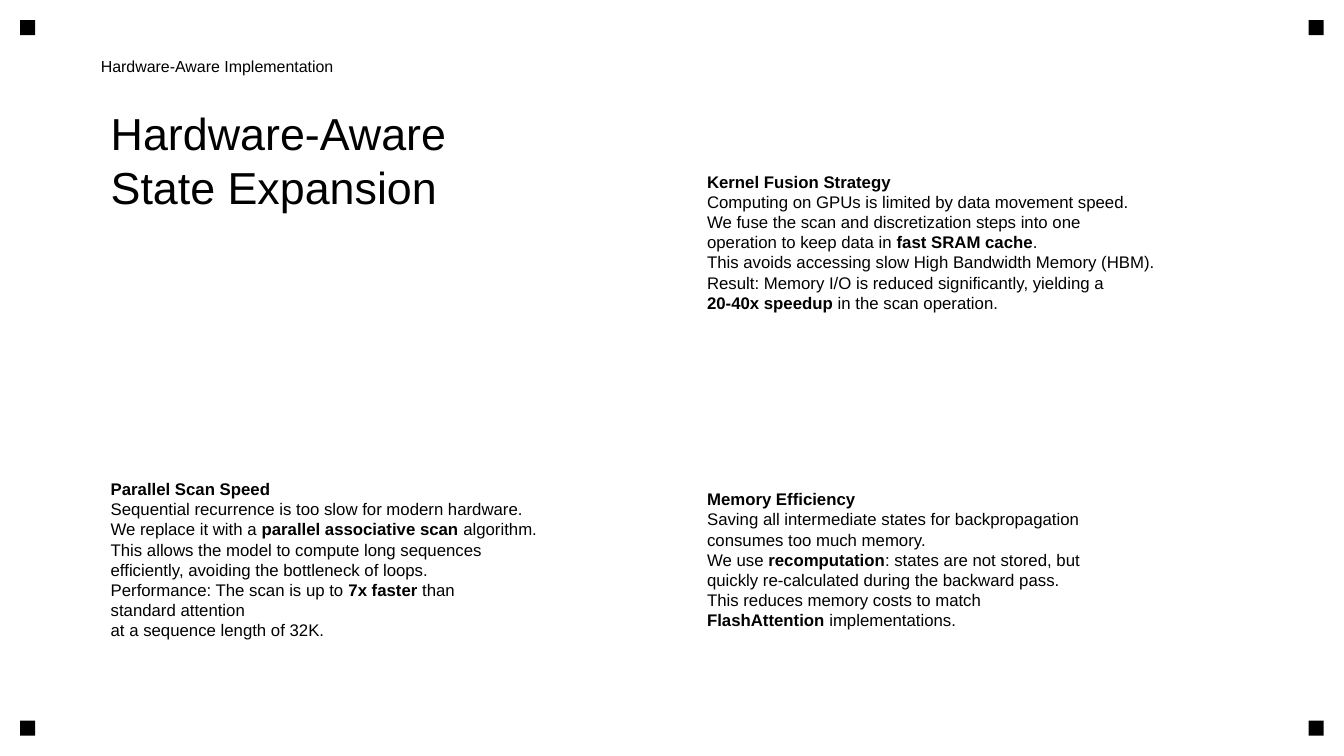
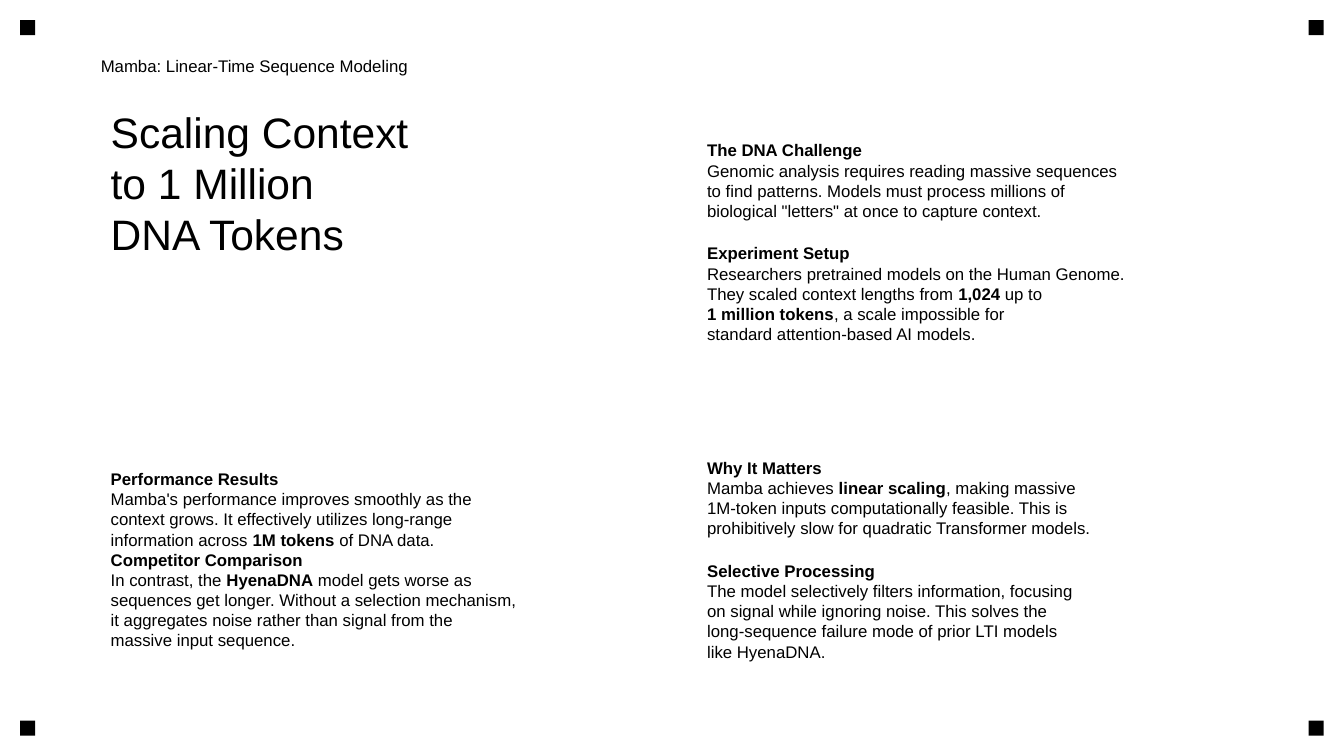
import pptx
import pptx.dml.color
import pptx.enum.shapes
import pptx.enum.text
import pptx.util
from pptx.util import Cm, Pt

INK = pptx.dml.color.RGBColor(0x00, 0x00, 0x00)
PAPER = pptx.dml.color.RGBColor(0xFF, 0xFF, 0xFF)
FONT = "Arial"
BODY_SIZE = 12
LEADING = 1.2

PAGE_WIDTH, PAGE_HEIGHT = Cm(33.87), Cm(19.05)
MARGIN, BOTTOM_MARGIN = Cm(2.54), Cm(1.27)
COLUMN_GAP, ROW_GAP = Cm(1.27), Cm(0.76)
PANEL_WIDTH = (PAGE_WIDTH - 2 * MARGIN - COLUMN_GAP) // 2
PANEL_HEIGHT = (PAGE_HEIGHT - MARGIN - BOTTOM_MARGIN - ROW_GAP) // 2
PANEL_INSETS = (Cm(0.25), Cm(0.13), Cm(0.13), Cm(0.25))
SECTION_GAP = Pt(16)
CORNER_SIZE, CORNER_INSET = Cm(0.38), Cm(0.51)

# In body text, ** switches bold on and off. A panel is a list of sections,
# each a list of lines that starts with its heading.
SLIDES = [
    {
        "caption": ("Hardware-Aware Implementation", 11.4),
        "title": (["Hardware-Aware", "State Expansion"], 32),
        "top_right": [[
            "**Kernel Fusion Strategy**",
            "Computing on GPUs is limited by data movement speed.",
            "We fuse the scan and discretization steps into one",
            "operation to keep data in **fast SRAM cache**.",
            "This avoids accessing slow High Bandwidth Memory (HBM).",
            "Result: Memory I/O is reduced significantly, yielding a",
            "**20-40x speedup** in the scan operation.",
        ]],
        "bottom_left": [[
            "**Parallel Scan Speed**",
            "Sequential recurrence is too slow for modern hardware.",
            "We replace it with a **parallel associative scan** algorithm.",
            "This allows the model to compute long sequences",
            "efficiently, avoiding the bottleneck of loops.",
            "Performance: The scan is up to **7x faster** than",
            "standard attention",
            "at a sequence length of 32K.",
        ]],
        "bottom_right": [[
            "**Memory Efficiency**",
            "Saving all intermediate states for backpropagation",
            "consumes too much memory.",
            "We use **recomputation**: states are not stored, but",
            "quickly re-calculated during the backward pass.",
            "This reduces memory costs to match",
            "**FlashAttention** implementations.",
        ]],
    },
    {
        "caption": ("Mamba: Linear-Time Sequence Modeling", 12),
        "title": (["Scaling Context", "to 1 Million", "DNA Tokens"], 30.4),
        "top_right": [[
            "**The DNA Challenge**",
            "Genomic analysis requires reading massive sequences",
            "to find patterns. Models must process millions of",
            'biological "letters" at once to capture context.',
        ], [
            "**Experiment Setup**",
            "Researchers pretrained models on the Human Genome.",
            "They scaled context lengths from **1,024** up to",
            "**1 million tokens**, a scale impossible for",
            "standard attention-based AI models.",
        ]],
        "bottom_left": [[
            "**Performance Results**",
            "Mamba's performance improves smoothly as the",
            "context grows. It effectively utilizes long-range",
            "information across **1M tokens** of DNA data.",
            "**Competitor Comparison**",
            "In contrast, the **HyenaDNA** model gets worse as",
            "sequences get longer. Without a selection mechanism,",
            "it aggregates noise rather than signal from the",
            "massive input sequence.",
        ]],
        "bottom_right": [[
            "**Why It Matters**",
            "Mamba achieves **linear scaling**, making massive",
            "1M-token inputs computationally feasible. This is",
            "prohibitively slow for quadratic Transformer models.",
        ], [
            "**Selective Processing**",
            "The model selectively filters information, focusing",
            "on signal while ignoring noise. This solves the",
            "long-sequence failure mode of prior LTI models",
            "like HyenaDNA.",
        ]],
    },
]


def panel_box(column, row):
    """Return left, top, width and height of a cell of the two-by-two grid."""
    return (MARGIN + column * (PANEL_WIDTH + COLUMN_GAP),
            MARGIN + row * (PANEL_HEIGHT + ROW_GAP),
            PANEL_WIDTH, PANEL_HEIGHT)


def set_frame(shape, insets, anchor):
    frame = shape.text_frame
    frame.word_wrap = True
    frame.auto_size = pptx.enum.text.MSO_AUTO_SIZE.NONE
    frame.vertical_anchor = anchor
    (frame.margin_left, frame.margin_top,
     frame.margin_right, frame.margin_bottom) = insets
    return frame


def write_sections(frame, sections, size):
    paragraph = None
    for section in sections:
        if paragraph is not None:
            paragraph.space_after = SECTION_GAP
        for line in section:
            paragraph = frame.paragraphs[0] if paragraph is None else frame.add_paragraph()
            for index, span in enumerate(line.split("**")):
                if span:
                    run = paragraph.add_run()
                    run.text = span
                    if index % 2:
                        run.font.bold = True
            paragraph.alignment = pptx.enum.text.PP_ALIGN.LEFT
            paragraph.line_spacing = Pt(round(size * LEADING, 1))
            paragraph.font.name = FONT
            paragraph.font.size = Pt(size)
            paragraph.font.color.rgb = INK


def add_corner_marks(page):
    for top in (CORNER_INSET, PAGE_HEIGHT - CORNER_INSET - CORNER_SIZE):
        for left in (CORNER_INSET, PAGE_WIDTH - CORNER_INSET - CORNER_SIZE):
            mark = page.shapes.add_shape(
                pptx.enum.shapes.MSO_SHAPE.RECTANGLE, left, top, CORNER_SIZE, CORNER_SIZE)
            mark.shadow.inherit = False
            mark.fill.solid()
            mark.fill.fore_color.rgb = INK
            mark.line.fill.background()


def place_title(page, box, lines, size):
    title = page.shapes.title
    title.left, title.top, title.width, title.height = box
    frame = set_frame(title, PANEL_INSETS, pptx.enum.text.MSO_ANCHOR.TOP)
    write_sections(frame, [lines], size)


def add_text(page, box, sections, size=BODY_SIZE, insets=PANEL_INSETS):
    shape = page.shapes.add_textbox(*box)
    frame = set_frame(shape, insets, pptx.enum.text.MSO_ANCHOR.MIDDLE)
    write_sections(frame, sections, size)


def add_quadrant_slide(deck, content):
    page = deck.slides.add_slide(deck.slide_layouts[5])
    page.background.fill.solid()
    page.background.fill.fore_color.rgb = PAPER
    add_corner_marks(page)
    place_title(page, panel_box(0, 0), *content["title"])
    add_text(page, panel_box(1, 0), content["top_right"])
    add_text(page, panel_box(0, 1), content["bottom_left"])
    add_text(page, panel_box(1, 1), content["bottom_right"])
    caption, size = content["caption"]
    caption_box = (MARGIN, Cm(1.02), Cm(15.24), Cm(1.27))
    add_text(page, caption_box, [[caption]], size, insets=(0, 0, 0, 0))


def main():
    deck = pptx.Presentation()
    deck.slide_width, deck.slide_height = PAGE_WIDTH, PAGE_HEIGHT
    for content in SLIDES:
        add_quadrant_slide(deck, content)
    deck.save("out.pptx")


if __name__ == "__main__":
    main()
